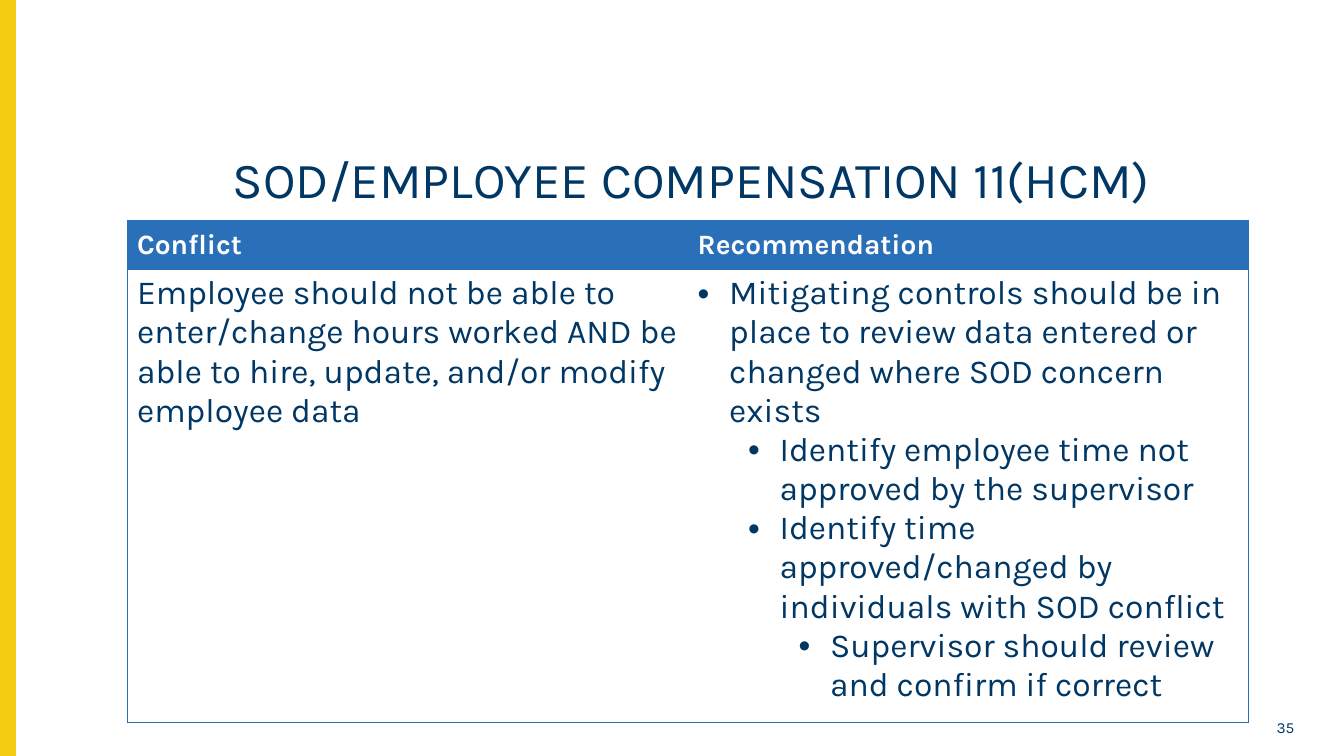
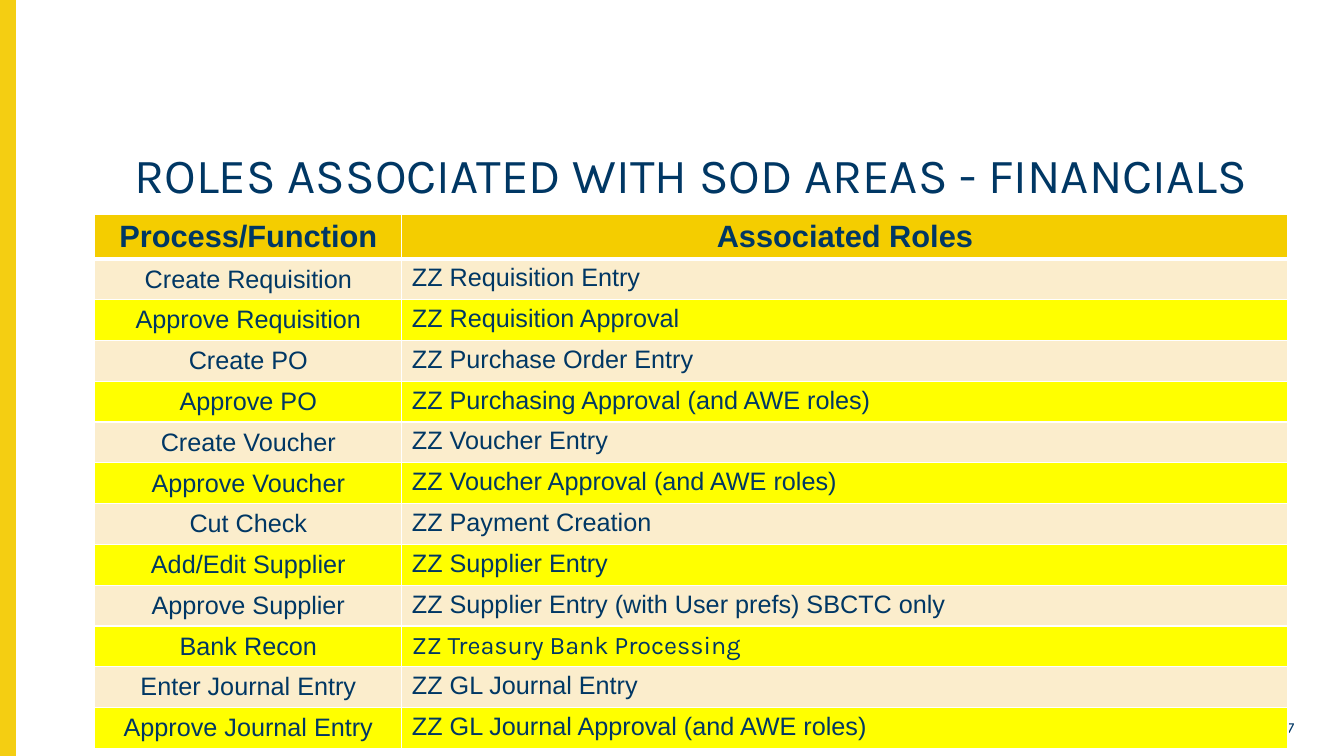
from lxml import etree
from pptx import Presentation
from pptx.dml.color import RGBColor
from pptx.enum.shapes import MSO_SHAPE
from pptx.enum.text import MSO_ANCHOR as ANCHOR, PP_ALIGN as ALIGN
from pptx.oxml.ns import qn
from pptx.util import Pt

NAVY, WHITE, BLUE = "003764", "FFFFFF", "2A70B8"
BAND, GOLD, CREAM, YELLOW = "F4CE12", "F4CD00", "FBEDCC", "FFFF00"
PLAIN_TABLE = "{2D5ABB26-0587-4C30-8999-92F81FD0307C}"
rgb = RGBColor.from_string


def style(paragraph, size, font="Karla", color=NAVY, bold=False, align=ALIGN.LEFT):
    paragraph.alignment = align
    for run in paragraph.runs:
        run.font.size = Pt(size)
        run.font.name = font
        run.font.bold = bold
        run.font.color.rgb = rgb(color)


def draw_borders(cell, color, **widths):
    """Add cell borders; call before filling the cell."""
    properties = cell._tc.get_or_add_tcPr()
    for side in "LRTB":
        if side in widths:
            line = etree.SubElement(properties, qn(f"a:ln{side}"), w=str(Pt(widths[side])))
            fill = etree.SubElement(line, qn("a:solidFill"))
            etree.SubElement(fill, qn("a:srgbClr"), val=color)


presentation = Presentation()
presentation.slide_width, presentation.slide_height = Pt(960), Pt(540)

# Title, title size, title top, page number, table left and top, columns, rows
slides = [
    ("SOD/EMPLOYEE COMPENSATION 11(HCM)", 36, 107.3, "35",
     90.7, 157.5, [400.5, 400.5], [34.6, 315]),
    ("ROLES ASSOCIATED WITH SOD AREAS - FINANCIALS", 35, 104.4, "37",
     67.7, 153.5, [219.4, 633], [31] + [29.16] * 12),
]

# Shared parts: band, title, page number and an unstyled table
tables = []
for title, title_size, title_top, number, left, top, columns, rows in slides:
    slide = presentation.slides.add_slide(presentation.slide_layouts[6])

    band = slide.shapes.add_shape(MSO_SHAPE.RECTANGLE, 0, 0, Pt(10.8), Pt(540))
    band.shadow.inherit = False
    band.fill.solid()
    band.fill.fore_color.rgb = rgb(BAND)
    band.line.color.rgb = rgb(BAND)
    band.line.width = Pt(1)

    title_box = slide.shapes.add_textbox(Pt(56.2), Pt(title_top), Pt(875.5), Pt(50))
    title_box.text_frame.word_wrap = True
    title_box.text_frame.text = title
    title_paragraph = title_box.text_frame.paragraphs[0]
    title_paragraph.line_spacing = 0.9
    style(title_paragraph, title_size, align=ALIGN.CENTER)

    number_box = slide.shapes.add_textbox(Pt(882.7), Pt(510.5), Pt(49), Pt(18.7))
    number_box.text_frame.word_wrap = True
    number_box.text_frame.vertical_anchor = ANCHOR.MIDDLE
    number_box.text_frame.text = number
    style(number_box.text_frame.paragraphs[0], 11, align=ALIGN.RIGHT)

    frame = slide.shapes.add_table(len(rows), len(columns), Pt(left), Pt(top),
                                   Pt(sum(columns)), Pt(sum(rows)))
    table = frame.table
    table.horz_banding = False
    table._tbl.tblPr.find(qn("a:tableStyleId")).text = PLAIN_TABLE
    for column, width in zip(table.columns, columns):
        column.width = Pt(width)
    for row, height in zip(table.rows, rows):
        row.height = Pt(height)
    tables.append(table)

conflict_table, roles_table = tables

# Conflict table: header, then the conflict and its recommendations
for index, (heading, outer_side) in enumerate([("Conflict", "L"), ("Recommendation", "R")]):
    header, body = conflict_table.cell(0, index), conflict_table.cell(1, index)
    header.text_frame.text = heading
    style(header.text_frame.paragraphs[0], 20, color=WHITE, bold=True)
    header.vertical_anchor = ANCHOR.MIDDLE
    draw_borders(header, BLUE, T=0.5, **{outer_side: 0.5})
    header.fill.solid()
    header.fill.fore_color.rgb = rgb(BLUE)
    draw_borders(body, BLUE, T=0.5, B=0.5, **{outer_side: 0.5})

conflict = conflict_table.cell(1, 0).text_frame
conflict.text = ("Employee should not be able to enter/change hours worked AND be able "
                 "to hire, update, and/or modify employee data")
style(conflict.paragraphs[0], 24)

recommendations = [
    (0, "Mitigating controls should be in place to review data entered or changed "
        "where SOD concern exists"),
    (1, "Identify employee time not approved by the supervisor"),
    (1, "Identify time approved/changed by individuals with SOD conflict"),
    (2, "Supervisor should review and confirm if correct"),
]
recommendation = conflict_table.cell(1, 1).text_frame
recommendation.text = "\n".join(text for level, text in recommendations)
for paragraph, (level, text) in zip(recommendation.paragraphs, recommendations):
    paragraph.level = level
    properties = paragraph._p.get_or_add_pPr()
    properties.set("marL", str(Pt(22.5 + 36 * level)))
    properties.set("indent", str(Pt(-22.5)))
    etree.SubElement(properties, qn("a:buFont"), typeface="Arial")
    etree.SubElement(properties, qn("a:buChar"), char="•")
    style(paragraph, 24)

# Roles table: gold header, then alternating cream and yellow rows
roles = [
    ("Process/Function", "Associated Roles"),
    ("Create Requisition", "ZZ Requisition Entry"),
    ("Approve Requisition", "ZZ Requisition Approval"),
    ("Create PO", "ZZ Purchase Order Entry"),
    ("Approve PO", "ZZ Purchasing Approval (and AWE roles)"),
    ("Create Voucher", "ZZ Voucher Entry"),
    ("Approve Voucher", "ZZ Voucher Approval (and AWE roles)"),
    ("Cut Check", "ZZ Payment Creation"),
    ("Add/Edit Supplier", "ZZ Supplier Entry"),
    ("Approve Supplier", "ZZ Supplier Entry (with User prefs) SBCTC only"),
    ("Bank Recon", "ZZ Treasury Bank Processing"),
    ("Enter Journal Entry", "ZZ GL Journal Entry"),
    ("Approve Journal Entry", "ZZ GL Journal Approval (and AWE roles)"),
]
for row_index, texts in enumerate(roles):
    is_header = row_index == 0
    fill = GOLD if is_header else (YELLOW, CREAM)[row_index % 2]
    for column_index, text in enumerate(texts):
        cell = roles_table.cell(row_index, column_index)
        cell.text_frame.text = text
        centred = is_header or column_index == 0
        style(cell.text_frame.paragraphs[0], 22 if is_header else 18,
              font="Karla" if text == "ZZ Treasury Bank Processing" else "Arial",
              bold=is_header, align=ALIGN.CENTER if centred else ALIGN.LEFT)
        cell.vertical_anchor = ANCHOR.MIDDLE if centred else ANCHOR.TOP
        if is_header:
            cell.margin_top = cell.margin_bottom = Pt(2.5)
        draw_borders(cell, WHITE, L=1, R=1, T=3 if row_index == 1 else 1,
                     B=3 if is_header else 1)
        cell.fill.solid()
        cell.fill.fore_color.rgb = rgb(fill)

presentation.save("out.pptx")
